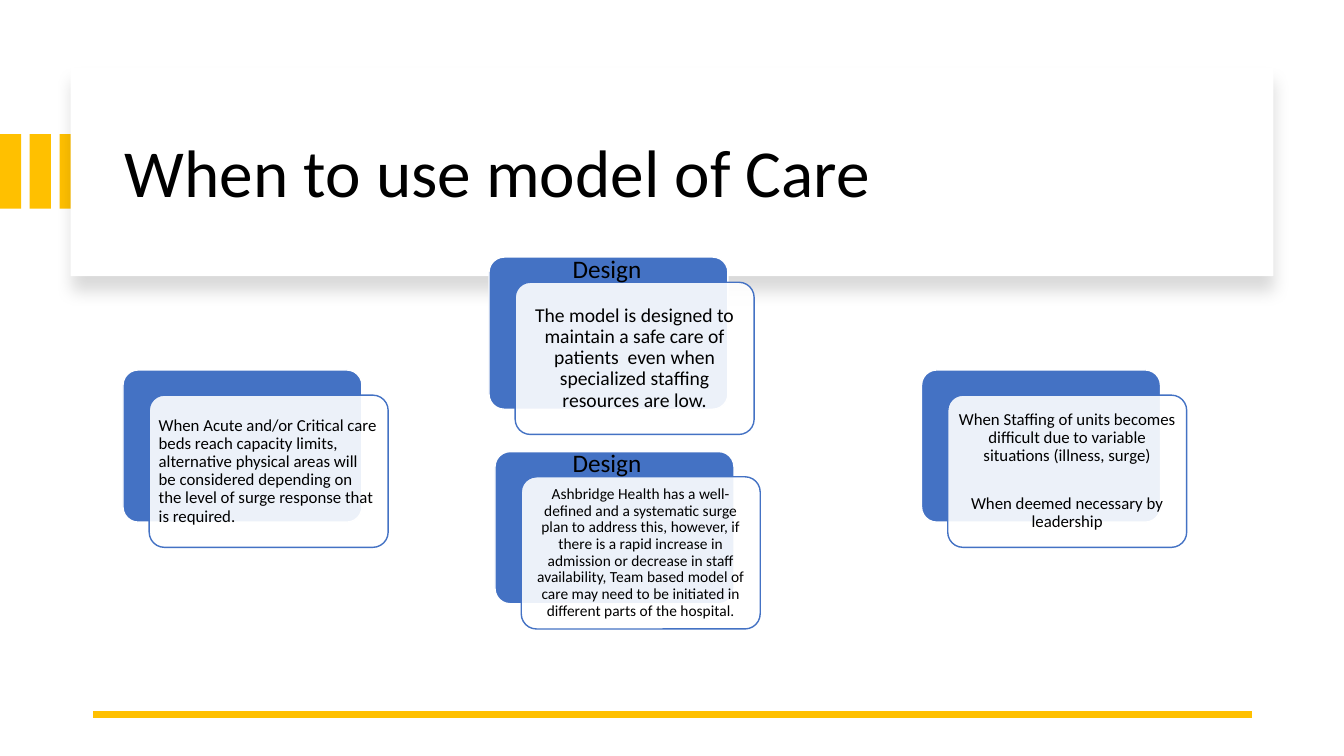
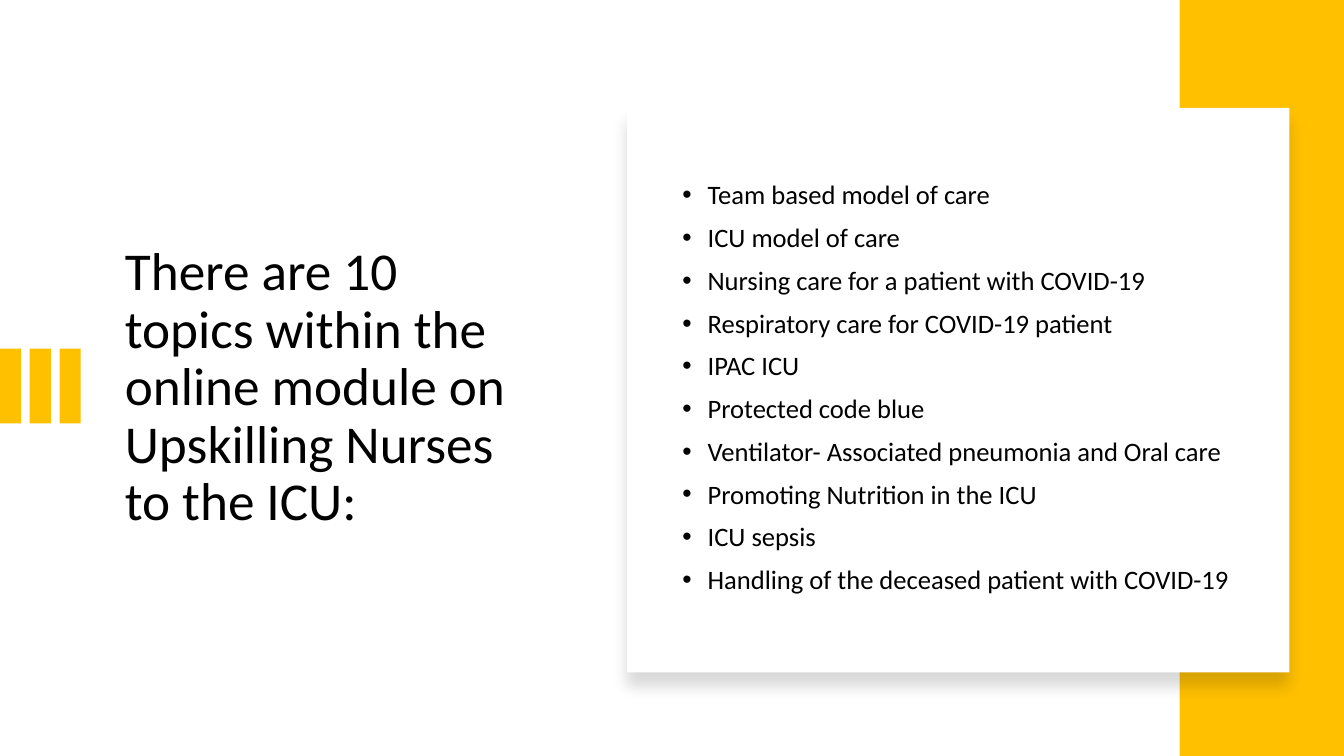
from lxml import etree
from pptx import Presentation
from pptx import util as u
from pptx.dml import color
from pptx.enum import shapes, text
from pptx.oxml import ns

FONT = "Calibri"
GOLD, BLUE, WHITE, BLACK = "FFC000", "4472C4", "FFFFFF", "000000"
LEFT, CENTER = text.PP_ALIGN.LEFT, text.PP_ALIGN.CENTER
TOP, MIDDLE = text.MSO_ANCHOR.TOP, text.MSO_ANCHOR.MIDDLE


def rgb(code):
    return color.RGBColor.from_string(code)


def add_xml(parent, tag, **attributes):
    return etree.SubElement(parent, ns.qn(tag), attributes)


def write(frame, paragraphs, size, align=LEFT, anchor=MIDDLE, margins=(0.1, 0.05),
          wrap=True, leading=0.9, before=0, gap=0, bullet=None):
    frame.word_wrap = wrap
    frame.vertical_anchor = anchor
    frame.margin_left = frame.margin_right = u.Inches(margins[0])
    frame.margin_top = frame.margin_bottom = u.Inches(margins[1])
    for index, wording in enumerate(paragraphs):
        paragraph = frame.add_paragraph() if index else frame.paragraphs[0]
        paragraph.alignment = align
        paragraph.line_spacing = leading
        paragraph.space_before = u.Pt(before)
        paragraph.space_after = u.Pt(gap if index < len(paragraphs) - 1 else 0)
        if bullet:
            properties = paragraph._p.get_or_add_pPr()
            properties.set("marL", str(u.Inches(0.25)))
            properties.set("indent", str(-u.Inches(0.25)))
            add_xml(properties, "a:buFont", typeface="Arial")
            add_xml(properties, "a:buChar", char=bullet)
        run = paragraph.add_run()
        run.text = wording
        run.font.name = FONT
        run.font.size = u.Pt(size)
        run.font.color.rgb = rgb(BLACK)


class Deck:
    """Holds the shared style and the slide being built."""

    def __init__(self):
        self.presentation = Presentation()
        self.presentation.slide_width = u.Inches(13.33)
        self.presentation.slide_height = u.Inches(7.5)
        self.slide = None

    def new_slide(self):
        self.slide = self.presentation.slides.add_slide(self.presentation.slide_layouts[6])

    def box(self, left, top, width, height, fill, line=None, opacity=None, rounding=None):
        kind = shapes.MSO_SHAPE.RECTANGLE if rounding is None else shapes.MSO_SHAPE.ROUNDED_RECTANGLE
        shape = self.slide.shapes.add_shape(kind, *map(u.Inches, (left, top, width, height)))
        shape.shadow.inherit = False
        if rounding is not None:
            shape.adjustments[0] = rounding
        shape.fill.solid()
        shape.fill.fore_color.rgb = rgb(fill)
        if opacity is not None:
            tint = shape._element.spPr.find(ns.qn("a:solidFill"))[0]
            add_xml(tint, "a:alpha", val=str(opacity * 1000))
        if line:
            shape.line.color.rgb = rgb(line)
            shape.line.width = u.Pt(1)
        else:
            shape.line.fill.background()
        return shape

    def label(self, left, top, width, height, paragraphs, size, **layout):
        area = self.slide.shapes.add_textbox(*map(u.Inches, (left, top, width, height)))
        write(area.text_frame, paragraphs, size, **layout)

    def stripes(self, top):
        for column in range(3):
            self.box(column * 0.295, top, 0.21, 0.74, GOLD)

    def panel(self, left, top, width, height):
        panel = self.box(left, top, width, height, WHITE)
        effects = panel._element.spPr.find(ns.qn("a:effectLst"))
        shadow = add_xml(effects, "a:outerShdw", blurRad=str(u.Pt(11)), dist=str(u.Pt(10)),
                         dir="5400000", algn="t", rotWithShape="0")
        add_xml(add_xml(shadow, "a:srgbClr", val=BLACK), "a:alpha", val="15000")

    def rule(self, left, right, top):
        rule = self.slide.shapes.add_connector(
            shapes.MSO_CONNECTOR.STRAIGHT, *map(u.Inches, (right, top, left, top)))
        rule.line.color.rgb = rgb(GOLD)
        rule.line.width = u.Pt(4.5)
        add_xml(rule._element.spPr, "a:effectLst")

    def card(self, left, top, paragraphs, size, align=CENTER):
        self.box(left, top, 2.37, 1.51, BLUE, line=WHITE, rounding=0.1)
        front = self.box(left + 0.26, top + 0.25, 2.37, 1.51, WHITE,
                         line=BLUE, opacity=90, rounding=0.1)
        write(front.text_frame, paragraphs, size, align=align, margins=(0.05, 0.05), gap=21)


def model_of_care(deck):
    deck.new_slide()
    deck.stripes(1.33)
    deck.panel(0.7, 0.67, 11.93, 2.07)
    deck.label(1.14, 0.89, 11.13, 1.7, ["When to use model of Care"], 48)
    deck.rule(0.92, 12.42, 7.09)
    deck.card(1.22, 3.67, [
        "When Acute and/or Critical care beds reach capacity limits, alternative physical areas "
        "will be considered depending on the level of surge response that is required."],
        12, align=LEFT)
    deck.card(4.91, 4.48, [
        "Ashbridge Health has a well-defined and a systematic surge plan to address this, "
        "however, if there is a rapid increase in admission or decrease in staff availability, "
        "Team based model of care may need to be initiated in different parts of the hospital."],
        11)
    deck.card(9.14, 3.67, [
        "When Staffing of units becomes difficult due to variable situations (illness, surge)",
        "When deemed necessary by leadership"], 12)
    deck.card(4.85, 2.55, [
        "The model is designed to maintain a safe care of patients  even when specialized "
        "staffing resources are low."], 14)
    for top in (2.46, 4.39):
        deck.label(5.58, top, 0.89, 0.4, ["Design"], 18, anchor=TOP, wrap=False, leading=1.0)


def module_topics(deck):
    deck.new_slide()
    deck.label(1.14, 1.46, 4.26, 4.79, [
        "There are 10 topics within the online module on Upskilling Nurses to the ICU:"], 38)
    deck.stripes(3.46)
    deck.box(11.7, 0, 1.63, 7.5, GOLD)
    deck.panel(6.22, 1.07, 6.57, 5.6)
    topics = [
        "Team based model of care",
        "ICU model of care",
        "Nursing care for a patient with COVID-19",
        "Respiratory care for COVID-19 patient",
        "IPAC ICU",
        "Protected code blue",
        "Ventilator- Associated pneumonia and Oral care",
        "Promoting Nutrition in the ICU",
        "ICU sepsis",
        "Handling of the deceased patient with COVID-19",
    ]
    deck.label(6.67, 1.46, 5.75, 4.79, topics, 19, before=10, bullet="•")


def main():
    deck = Deck()
    model_of_care(deck)
    module_topics(deck)
    deck.presentation.save("out.pptx")


if __name__ == "__main__":
    main()
